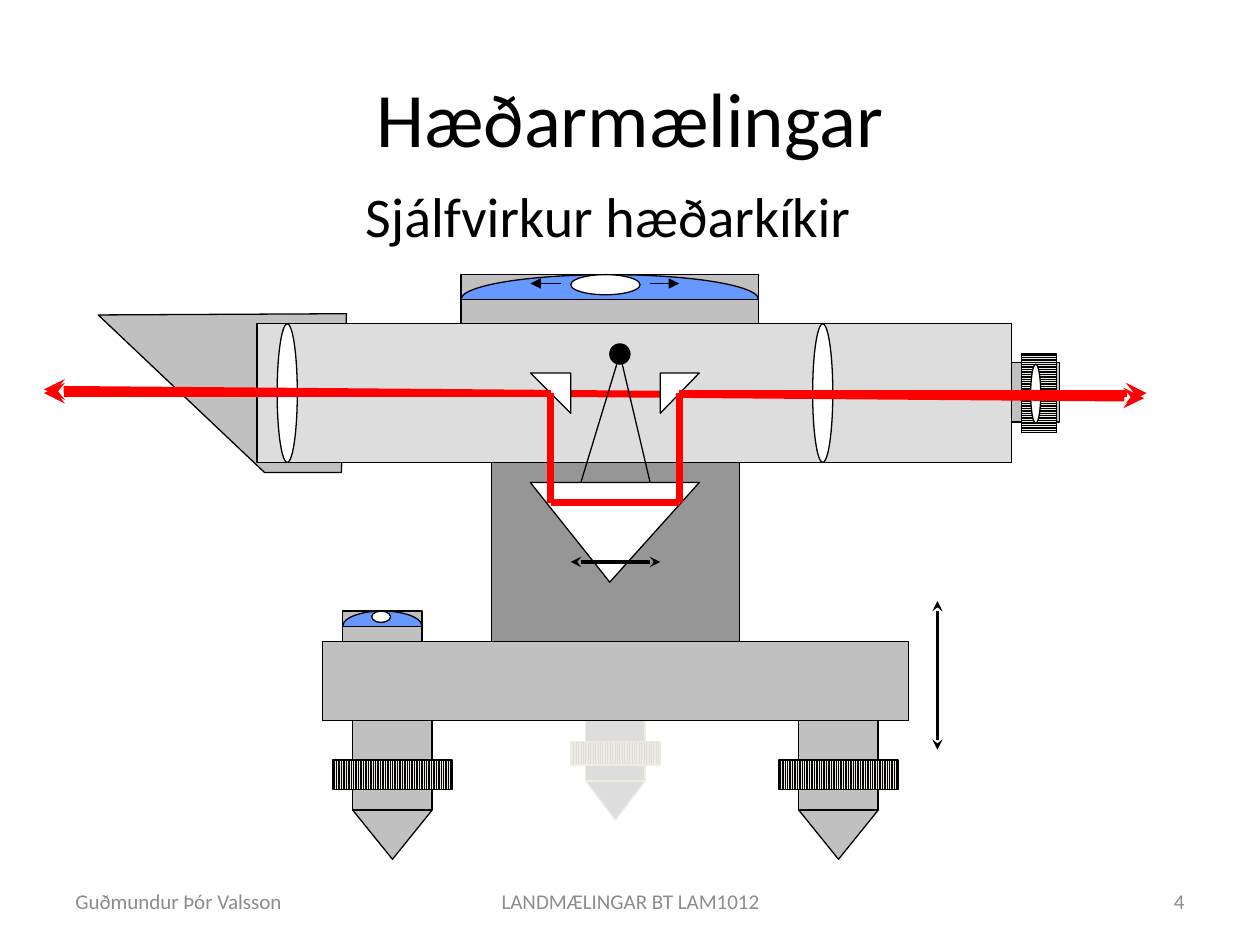
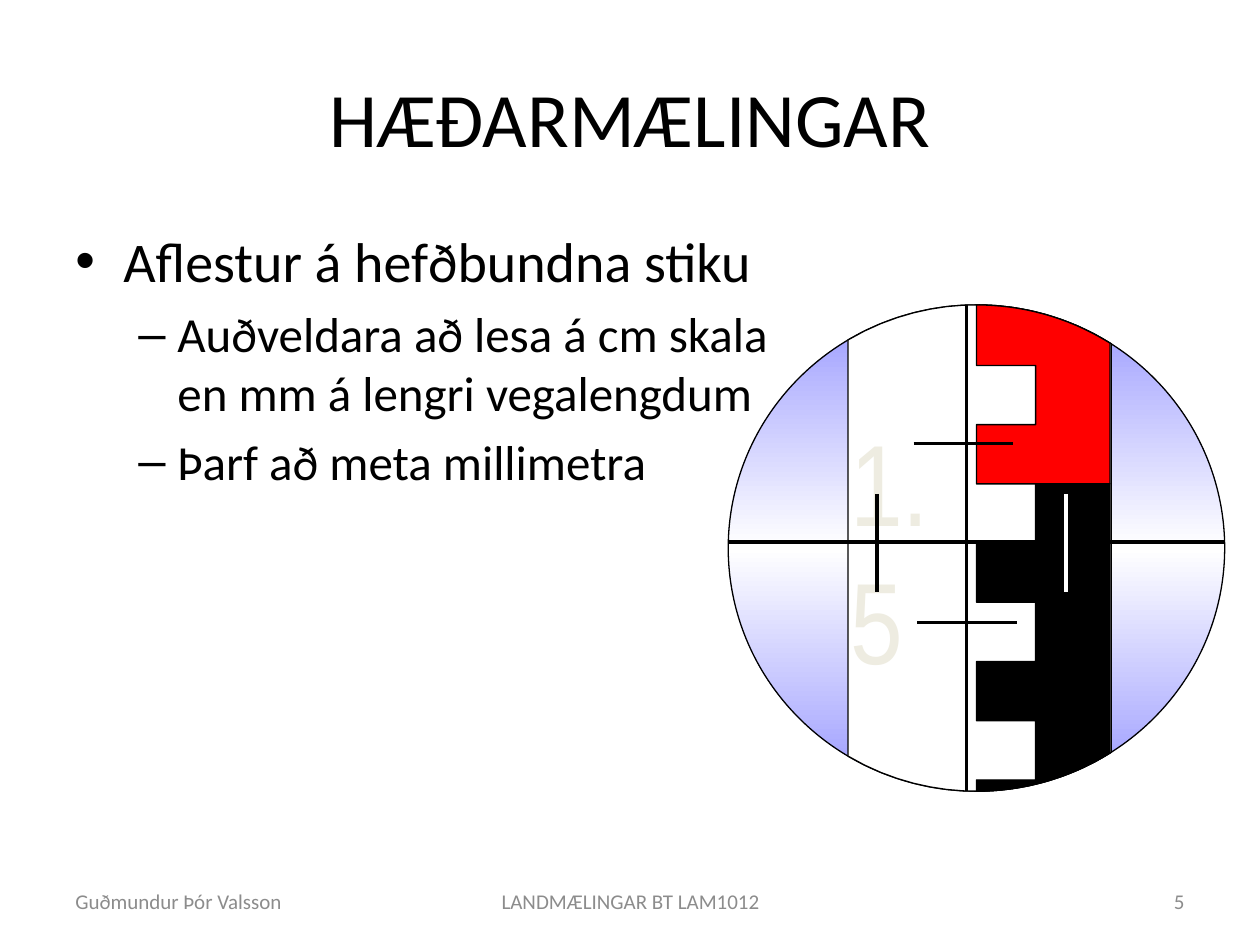
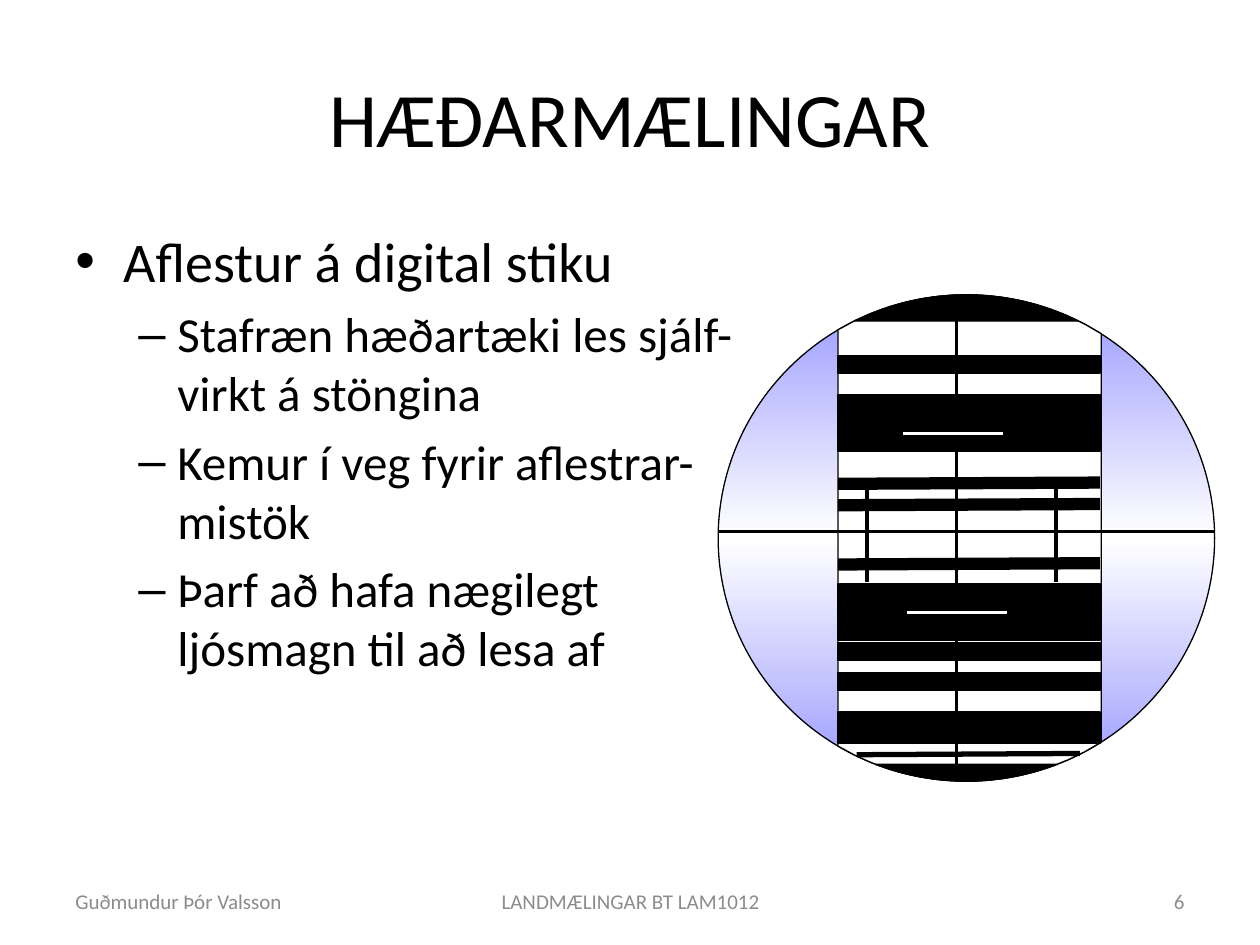
from copy import deepcopy
from dataclasses import dataclass
from functools import singledispatch
from math import sqrt

from lxml.etree import SubElement
from pptx import Presentation
from pptx.dml.color import RGBColor
from pptx.dml.fill import FillFormat
from pptx.enum.dml import MSO_PATTERN as Pattern
from pptx.enum.shapes import MSO_CONNECTOR as Link, MSO_SHAPE as Preset
from pptx.enum.text import MSO_ANCHOR as Anchor, PP_ALIGN as Align
from pptx.oxml.ns import qn
from pptx.shapes.autoshape import Shape
from pptx.shapes.shapetree import GroupShapes
from pptx.slide import Slide
from pptx.util import Cm, Pt

BLACK, WHITE, RED = "000000", "FFFFFF", "FF0000"
METAL, TUBE, PILLAR = "C0C0C0", "DDDDDD", "969696"
LIQUID, SKY, IVORY, FOOTER_GREY = "6699FF", "9999FF", "EEECE1", "8C8C8C"
AUTHOR, COURSE = "Guðmundur Þór Valsson", "LANDMÆLINGAR BT LAM1012"

Box = tuple[float, float, float, float]
Point = tuple[float, float]


@dataclass(frozen=True)
class Hatch:
    """A two-colour line pattern."""
    pattern: Pattern
    front: str
    back: str


@dataclass(frozen=True)
class Glow:
    """A vertical gradient from edge to middle and back."""
    edge: str
    middle: str


Fill = str | Hatch | Glow


@dataclass(frozen=True)
class Block:
    """A preset shape in a box."""
    box: Box
    fill: Fill
    preset: Preset = Preset.RECTANGLE
    line: str = BLACK
    turn: float = 0


@dataclass(frozen=True)
class Outline:
    """A closed polygon."""
    points: list[Point]
    fill: Fill
    line: str = BLACK


@dataclass(frozen=True)
class Stroke:
    """A straight line with optional arrowheads."""
    start: Point
    end: Point
    color: str = BLACK
    width: float = 2
    head: str = ""
    tail: str = ""


@dataclass(frozen=True)
class Line:
    """One paragraph of text."""
    text: str
    size: float
    color: str = BLACK
    align: Align = Align.LEFT
    font: str = "Calibri"
    bullet: str = ""


@dataclass(frozen=True)
class Label:
    """A text box with its paragraphs."""
    box: Box
    lines: list[Line]
    anchor: Anchor = Anchor.TOP


@dataclass(frozen=True)
class View:
    """The round field of view seen through the telescope."""
    x: float
    y: float
    rx: float = 1.97
    ry: float = 1.93

    def arc(self, first: float, last: float, side: int, steps: int = 16) -> list[Point]:
        """Follow the rim from one x to another, side -1 above and 1 below."""
        xs = [first + (last - first) * i / steps for i in range(steps + 1)]
        return [(x, self.y + side * self.ry * sqrt(1 - ((x - self.x) / self.rx) ** 2))
                for x in xs]

    def stroke(self, x1: float, y1: float, x2: float, y2: float, color: str = BLACK) -> Stroke:
        """Make a stroke measured from the centre of the view."""
        return Stroke((self.x + x1, self.y + y1), (self.x + x2, self.y + y2), color)


Part = Block | Outline | Stroke | Label


def length(inches: float) -> Cm:
    """Turn inches into a length."""
    return Cm(inches * 2.54)


def rgb(code: str) -> RGBColor:
    """Turn a hex string into a colour."""
    return RGBColor.from_string(code)


def solid(target: FillFormat, code: str) -> None:
    """Fill with one colour."""
    target.solid()
    target.fore_color.rgb = rgb(code)


def style(shape: Shape, fill: Fill, line: str) -> None:
    """Set the fill and the thin outline of a shape."""
    shape.shadow.inherit = False
    if isinstance(fill, Hatch):
        shape.fill.patterned()
        shape.fill.pattern = fill.pattern
        shape.fill.fore_color.rgb = rgb(fill.front)
        shape.fill.back_color.rgb = rgb(fill.back)
    elif isinstance(fill, Glow):
        shape.fill.gradient()
        shape.fill.gradient_angle = 90
        stops = shape._element.spPr.find(".//" + qn("a:gsLst"))
        stops.append(deepcopy(stops[0]))
        for i, stop in enumerate(shape.fill.gradient_stops):
            stop.position = i / 2
            stop.color.rgb = rgb(fill.middle if i == 1 else fill.edge)
    else:
        solid(shape.fill, fill)
    solid(shape.line.fill, line)
    shape.line.width = Pt(0.75)


@singledispatch
def draw(part: Part, canvas: GroupShapes) -> None:
    """Draw one part."""
    raise TypeError(part)


@draw.register
def draw_block(part: Block, canvas: GroupShapes) -> None:
    """Draw a preset shape."""
    block = canvas.add_shape(part.preset, *map(length, part.box))
    block.rotation = part.turn
    style(block, part.fill, part.line)


@draw.register
def draw_outline(part: Outline, canvas: GroupShapes) -> None:
    """Draw a polygon."""
    first, *rest = [(length(x), length(y)) for x, y in part.points]
    builder = canvas.build_freeform(*first)
    builder.add_line_segments(rest, close=True)
    style(builder.convert_to_shape(), part.fill, part.line)


@draw.register
def draw_stroke(part: Stroke, canvas: GroupShapes) -> None:
    """Draw a line with its arrowheads."""
    stroke = canvas.add_connector(Link.STRAIGHT, *map(length, part.start + part.end))
    solid(stroke.line.fill, part.color)
    stroke.line.width = Pt(part.width)
    properties = stroke._element.spPr
    for tag, kind in (("a:headEnd", part.head), ("a:tailEnd", part.tail)):
        if kind:
            SubElement(properties.find(qn("a:ln")), qn(tag), type=kind)
    SubElement(properties, qn("a:effectLst"))


@draw.register
def draw_label(part: Label, canvas: GroupShapes) -> None:
    """Draw a text box."""
    frame = canvas.add_textbox(*map(length, part.box)).text_frame
    frame.word_wrap = True
    frame.vertical_anchor = part.anchor
    for i, line in enumerate(part.lines):
        paragraph = frame.add_paragraph() if i else frame.paragraphs[0]
        paragraph.alignment = line.align
        if line.bullet:
            margin, hanging = (0.38, 0.38) if line.bullet == "•" else (0.81, 0.31)
            paragraph.level = 0 if line.bullet == "•" else 1
            properties = paragraph._p.get_or_add_pPr()
            properties.set("marL", str(length(margin)))
            properties.set("indent", str(-length(hanging)))
            SubElement(properties, qn("a:buFont"), typeface="Arial")
            SubElement(properties, qn("a:buChar"), char=line.bullet)
        if i:
            paragraph.space_before = Pt(line.size * 0.2)
        run = paragraph.add_run()
        run.text = line.text
        run.font.name = line.font
        run.font.size = Pt(line.size)
        run.font.color.rgb = rgb(line.color)


def draw_all(canvas: GroupShapes, parts: list[Part]) -> None:
    """Draw parts from back to front."""
    for part in parts:
        draw(part, canvas)


def oval(box: Box, fill: Fill = WHITE) -> Block:
    """Make an ellipse."""
    return Block(box, fill, Preset.OVAL)


def add_page(deck: Presentation, number: int, title: str) -> Slide:
    """Add a slide with its title and footer."""
    page = deck.slides.add_slide(deck.slide_layouts[6])
    draw(Label((0.5, 0.3, 9, 1.25), [Line(title, 44, align=Align.CENTER)], Anchor.MIDDLE),
         page.shapes)
    footers = ((0.5, 2.33, AUTHOR, Align.LEFT), (3.42, 3.17, COURSE, Align.CENTER),
               (7.17, 2.33, str(number), Align.RIGHT))
    for left, width, text, align in footers:
        draw(Label((left, 6.95, width, 0.4), [Line(text, 12, FOOTER_GREY, align)],
                   Anchor.MIDDLE), page.shapes)
    return page


def add_points(page: Slide, width: float, topic: str, details: list[str]) -> None:
    """Add the bulleted text."""
    lines = [Line(topic, 32, bullet="•")] + [Line(text, 28, bullet="–") for text in details]
    draw(Label((0.5, 1.75, width, 4.95), lines), page.shapes)


def vial(box: Box, bubble: Box) -> list[Part]:
    """Make a spirit level."""
    left, top, width, height = box
    return [Block(box, METAL), oval(box, LIQUID), oval(bubble),
            Block((left, top + height / 2, width, height / 2), METAL)]


def foot(left: float, top: float, width: float, stem: float, fill: str = METAL,
         line: str = BLACK, front: str = IVORY) -> list[Part]:
    """Make a foot screw: stem, tip and knurled ring."""
    base, overhang = top + stem, width / 4
    tip = [(left, base), (left + width, base), (left + width / 2, base + 0.55 * stem)]
    ring = (left - overhang, top + 0.44 * stem, width + 2 * overhang, stem / 3)
    return [Block((left, top, width, stem), fill, line=line), Outline(tip, fill, line),
            Block(ring, Hatch(Pattern.LIGHT_VERTICAL, front, line), line=line)]


def instrument() -> list[Part]:
    """List the body of the automatic level."""
    return [
        *vial((3.66, 2.18, 2.36, 0.39), (4.53, 2.18, 0.55, 0.16)),
        Stroke((5.16, 2.25), (5.39, 2.25), width=0.75, tail="triangle"),
        Stroke((4.45, 2.25), (4.21, 2.25), width=0.75, tail="triangle"),
        *foot(4.65, 5.64, 0.47, 0.56, TUBE, IVORY, TUBE),
        Block((2.56, 5.09, 4.65, 0.63), METAL),
        *foot(2.8, 5.72, 0.63, 0.71),
        *foot(6.34, 5.72, 0.63, 0.71),
        Block((3.9, 2.73, 1.97, 2.36), PILLAR),
        Block((8.02, 2.88, 0.39, 0.47), METAL),
        Block((7.93, 2.98, 0.63, 0.28), Hatch(Pattern.LIGHT_HORIZONTAL, IVORY, BLACK), turn=270),
        Outline([(0.78, 2.5), (2.75, 2.49), (2.71, 3.75), (2.1, 3.75)], METAL),
        Block((2.04, 2.57, 5.99, 1.1), TUBE),
        oval((2.2, 2.57, 0.16, 1.1)),
        oval((6.45, 2.57, 0.16, 1.1)),
        oval((8.18, 2.89, 0.08, 0.47)),
        *vial((2.72, 4.85, 0.63, 0.24), (2.95, 4.85, 0.15, 0.09)),
    ]


def compensator() -> list[Part]:
    """List the prisms, the pendulum and the line of sight."""
    pivot = (4.92, 2.81)
    entry, exit_ = (4.37, 3.12), (5.39, 3.12)
    low_entry, low_exit = (4.37, 3.99), (5.39, 3.99)
    ray = {"color": RED, "width": 4}
    both = {"head": "stealth", "tail": "stealth"}
    return [
        Stroke((0.35, 3.09), (9.08, 3.16), **ray, **both),
        Outline([(4.21, 2.96), (4.53, 3.28), (4.53, 2.96)], WHITE),
        Outline([(5.55, 2.96), (5.24, 3.28), (5.24, 2.96)], WHITE),
        Outline([(4.21, 3.83), (5.55, 3.83), (4.84, 4.62)], WHITE),
        Stroke(pivot, (4.61, 3.83), width=0.75),
        Stroke(pivot, (5.16, 3.83), width=0.75),
        oval((4.84, 2.73, 0.16, 0.16), BLACK),
        Stroke((4.53, 4.46), (5.24, 4.46), **both),
        Stroke(exit_, (9.1, 3.12), tail="stealth", **ray),
        Stroke(entry, (0.35, 3.12), tail="stealth", **ray),
        Stroke(entry, low_entry, **ray),
        Stroke(low_entry, low_exit, **ray),
        Stroke(exit_, low_exit, **ray),
        Stroke((7.44, 4.77), (7.44, 5.95), width=1.5, **both),
    ]


def staff(view: View) -> list[Part]:
    """Make the sky and the white staff clipped by the view."""
    left, right = view.x - 1.02, view.x + 1.07
    field = (view.x - view.rx, view.y - view.ry, 2 * view.rx, 2 * view.ry)
    return [oval(field, Glow(SKY, WHITE)),
            Outline(view.arc(left, right, -1) + view.arc(right, left, 1), WHITE)]


def cross_hair(view: View, right_tick: str = BLACK) -> list[Part]:
    """Make the cross hair with its upright side ticks."""
    return [view.stroke(-view.rx, -0.05, view.rx, -0.05),
            view.stroke(-0.08, -view.ry, -0.08, view.ry),
            view.stroke(-0.79, -0.43, -0.79, 0.35),
            view.stroke(0.71, -0.43, 0.71, 0.35, right_tick)]


def stadia(view: View, color: str) -> list[Part]:
    """Make the short level ticks above and below the centre."""
    return [view.stroke(-0.5, -0.83, 0.29, -0.83, color),
            view.stroke(-0.47, 0.59, 0.32, 0.59, color)]


def teeth(xs: list[float], top: float, step: float) -> list[Point]:
    """Make the stepped edge of the centimetre scale."""
    return [(x, top + step * (i + k)) for i, x in enumerate(xs) for k in (0, 1)]


def centimetre_scale(view: View) -> list[Part]:
    """Make the red and black scale with its reading."""
    outer, inner, edge, change, step = 7.75, 8.22, 8.81, 3.84, 0.47
    upper = teeth([outer, inner], change, -step) + [(outer, change - 2 * step)]
    lower = teeth([inner, outer, inner, outer, inner], change, step)
    lower.append((outer, change + 5 * step))
    return [
        Label((6.65, 3.21, 1.21, 1.2), [Line("1.5", 66, IVORY, font="Arial Narrow")]),
        Outline(upper + view.arc(outer, edge, -1) + [(edge, change)], RED),
        Outline(lower + view.arc(outer, edge, 1) + [(edge, change)], BLACK),
    ]


def bar_code(view: View) -> list[Part]:
    """Make the black bars of the digital staff."""
    left, right = 6.65, 8.73
    bars = ((3.13, 0.45), (2.82, 0.14), (4.63, 0.45), (5.1, 0.14), (5.34, 0.14), (5.65, 0.25))
    return [
        *(Block((left, top, right - left, height), BLACK) for top, height in bars),
        *(Stroke((left, y), (right, y - 0.01), width=7) for y in (3.84, 4.01, 4.48)),
        Stroke((6.8, 5.99), (8.57, 5.98), width=3),
        Outline(view.arc(6.78, 8.56, -1), BLACK),
        Outline(view.arc(6.95, 8.39, 1), BLACK),
    ]


def main() -> None:
    """Build the three slides."""
    deck = Presentation()
    deck.slide_width, deck.slide_height = Cm(25.4), Cm(19.05)

    level = add_page(deck, 4, "Hæðarmælingar")
    draw_all(level.shapes.add_group_shape().shapes, instrument())
    draw_all(level.shapes.add_group_shape().shapes, compensator())
    draw(Label((2.8, 1.39, 4.09, 0.64), [Line("Sjálfvirkur hæðarkíkir", 32)]), level.shapes)

    classic = add_page(deck, 5, "HÆÐARMÆLINGAR")
    add_points(classic, 5.98, "Aflestur á hefðbundna stiku", [
        "Auðveldara að lesa á cm skala en mm á lengri vegalengdum",
        "Þarf að meta millimetra"])
    view = View(7.75, 4.35)
    draw_all(classic.shapes.add_group_shape().shapes,
             staff(view) + centimetre_scale(view) + cross_hair(view, WHITE) + stadia(view, BLACK))

    digital = add_page(deck, 6, "HÆÐARMÆLINGAR")
    add_points(digital, 5.67, "Aflestur á digital stiku", [
        "Stafræn hæðartæki les sjálf-virkt á stöngina",
        "Kemur í veg fyrir aflestrar-mistök",
        "Þarf að hafa nægilegt ljósmagn til að lesa af"])
    view = View(7.67, 4.27)
    draw_all(digital.shapes.add_group_shape().shapes,
             staff(view) + cross_hair(view) + bar_code(view) + stadia(view, WHITE))

    deck.save("out.pptx")


if __name__ == "__main__":
    main()
